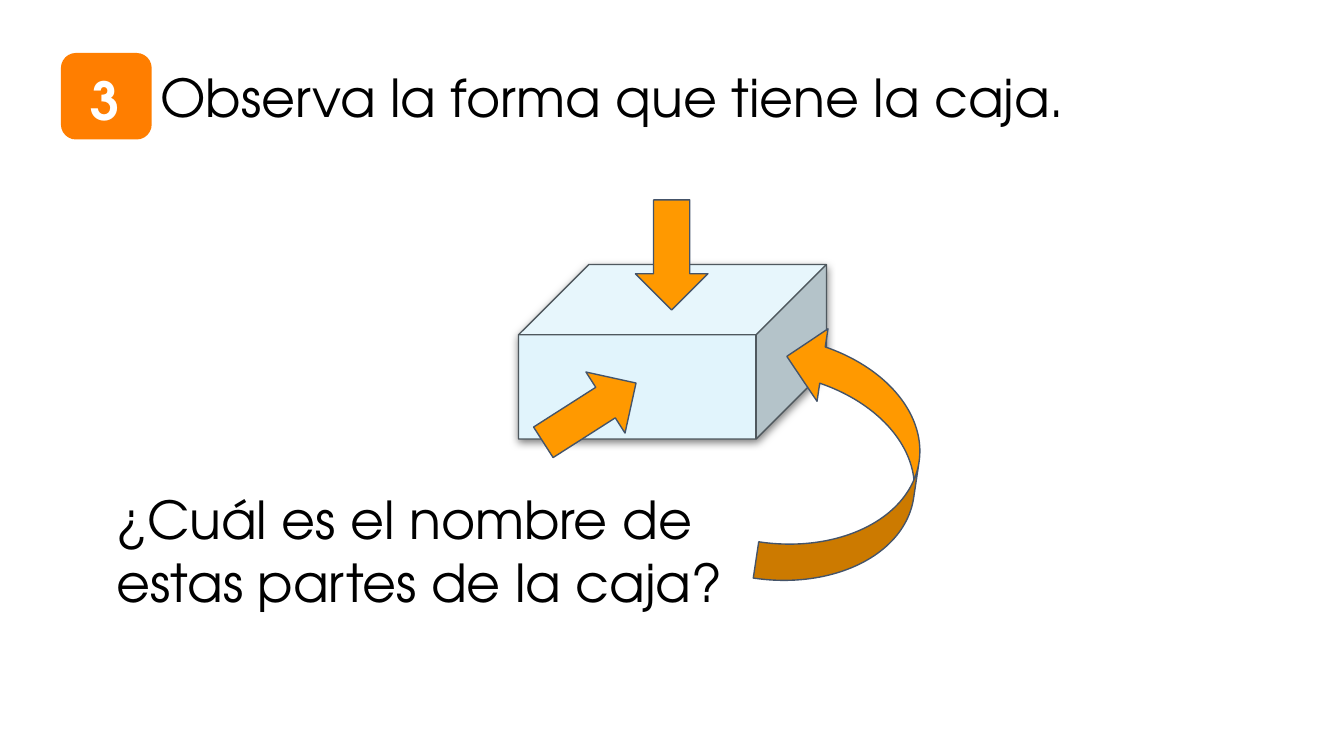
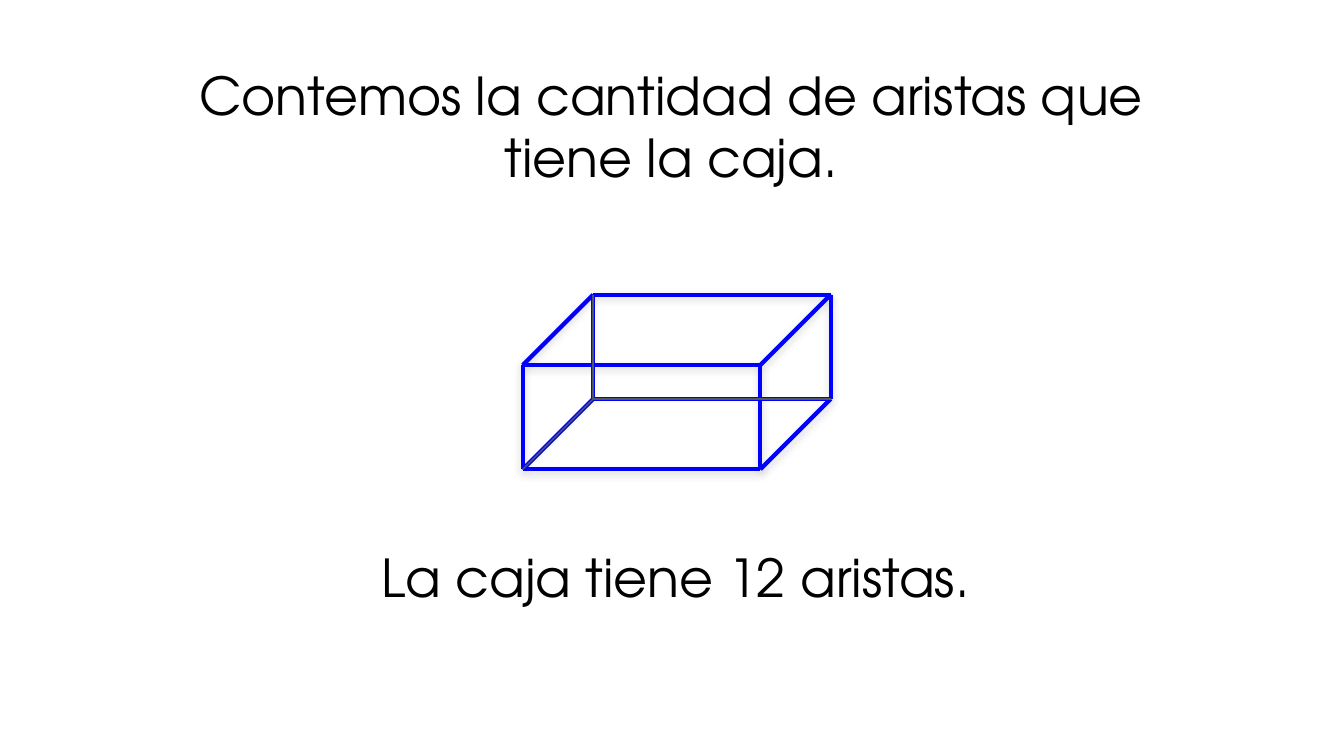
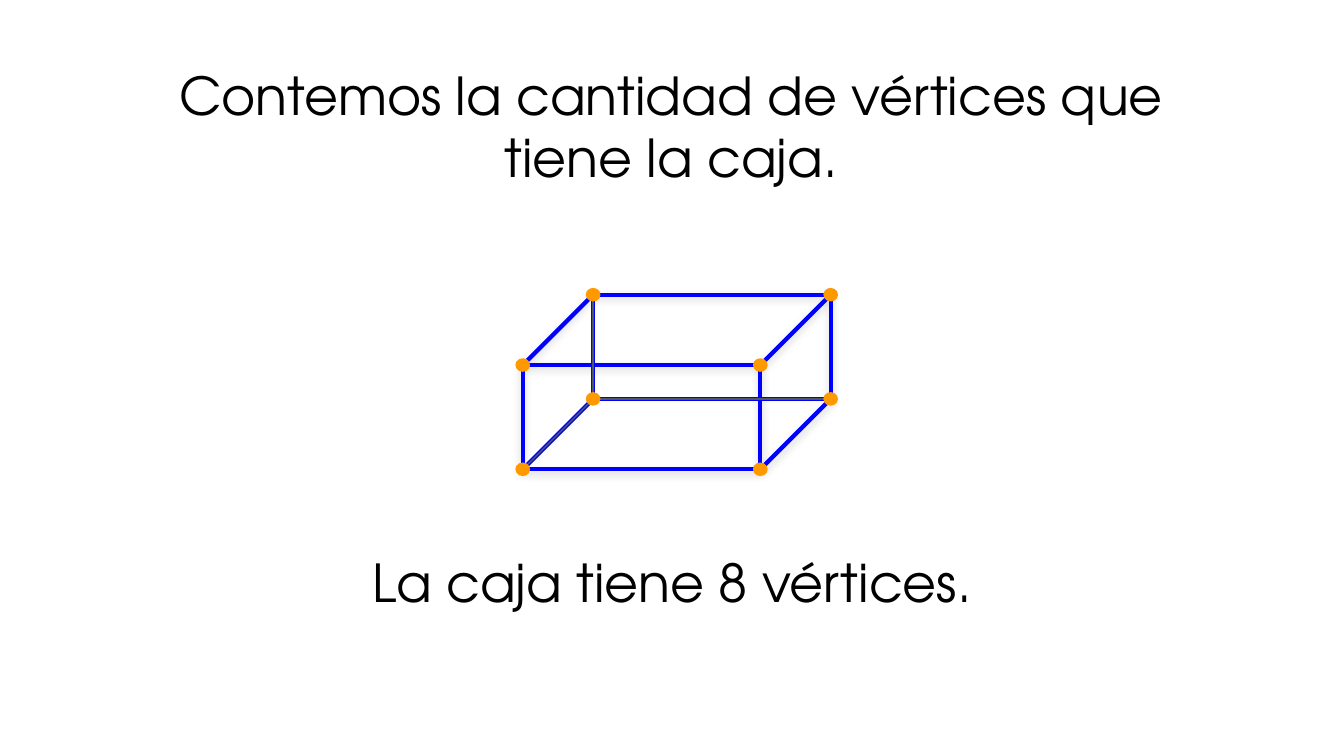
from lxml import etree
from pptx import Presentation
from pptx.dml.color import RGBColor
from pptx.enum.shapes import MSO_CONNECTOR, MSO_SHAPE
from pptx.enum.text import MSO_ANCHOR, MSO_AUTO_SIZE, PP_ALIGN
from pptx.oxml.ns import qn
from pptx.util import Cm, Pt

LEFT, CENTER = PP_ALIGN.LEFT, PP_ALIGN.CENTER
TOP, MIDDLE = MSO_ANCHOR.TOP, MSO_ANCHOR.MIDDLE
GROW = MSO_AUTO_SIZE.SHAPE_TO_FIT_TEXT
STRAIGHT = MSO_CONNECTOR.STRAIGHT
CUBE, OVAL, RECT = MSO_SHAPE.CUBE, MSO_SHAPE.OVAL, MSO_SHAPE.RECTANGLE
ROUND = MSO_SHAPE.ROUNDED_RECTANGLE
DOWN, CURVED = MSO_SHAPE.DOWN_ARROW, MSO_SHAPE.CURVED_UP_ARROW

FONT, SIZE = "TeX Gyre Adventor", 28
BLACK, WHITE = "000000", "FFFFFF"
BLUE, GREY, SLATE = "0000FF", "4F585D", "44546A"
ORANGE, BADGE, SKY = "FF9900", "FF7E00", "E1F4FC"

# Box geometry in cm: left, top, width, height
HEAD = (3.12, 1.09, 19.13, 2.59)
WIDE, HIGH, DEPTH = 5.82, 3.3, 1.33
DOT_W, DOT_H = 0.25, 0.23

# Corners run clockwise from top left, front face then back face
HIDDEN = [(4, 7), (7, 6), (7, 3)]
EDGES = [(base + i, base + (i + 1) % 4) for base in (0, 4) for i in range(4)]
EDGES += [(i, i + 4) for i in range(4)]


def color(code):
    return RGBColor.from_string(code)


def cms(box):
    return [Cm(value) for value in box]


# Text
def write(shape, text, align=LEFT, ink=BLACK, bold=False, anchor=TOP):
    frame = shape.text_frame
    frame.text = text
    frame.word_wrap = True
    frame.auto_size = GROW
    frame.vertical_anchor = anchor
    frame.margin_left = frame.margin_right = Cm(0.19)
    frame.margin_top = frame.margin_bottom = Cm(0.1)
    para = frame.paragraphs[0]
    para.alignment = align
    font = para.runs[0].font
    font.name, font.size, font.bold = FONT, Pt(SIZE), bold
    font.color.rgb = color(ink)


def title(slide, box, text, align):
    head = slide.shapes.title
    head.left, head.top, head.width, head.height = cms(box)
    write(head, text, align)


def note(slide, box, text, align):
    write(slide.shapes.add_textbox(*cms(box)), text, align)


# Shapes and lines
def shape(shapes, kind, box, fill, line, width=0.75, turn=0):
    item = shapes.add_shape(kind, *cms(box))
    item.shadow.inherit = False
    if fill:
        item.fill.solid()
        item.fill.fore_color.rgb = color(fill)
    else:
        item.fill.background()
    item.line.color.rgb = color(line)
    item.line.width = Pt(width)
    item.rotation = turn
    return item


def edge(shapes, start, end, ink, width):
    line = shapes.add_connector(STRAIGHT, *cms(start + end))
    line.line.color.rgb = color(ink)
    line.line.width = Pt(width)
    etree.SubElement(line._element.spPr, qn("a:effectLst"))


def cube(shapes, left, top, fill=None):
    item = shape(shapes, CUBE, (left, top, WIDE, HIGH), fill, "4F585E")
    item.adjustments[0] = DEPTH / HIGH
    effects = item._element.spPr.find(qn("a:effectLst"))
    shadow = etree.SubElement(effects, qn("a:outerShdw"), blurRad=str(Pt(4.5)),
                              dist=str(Pt(1.5)), dir="5400000", rotWithShape="0")
    tint = etree.SubElement(shadow, qn("a:srgbClr"), val=BLACK)
    etree.SubElement(tint, qn("a:alpha"), val="49000")


# Box drawn by its edges
def corners(left, top):
    right, low = left + WIDE - DEPTH, top + HIGH
    face = top + DEPTH
    front = [(left, face), (right, face), (right, low), (left, low)]
    return front + [(x + DEPTH, y - DEPTH) for x, y in front]


def frame(shapes, left, top):
    cube(shapes, left, top)
    points = corners(left, top)
    for pairs, ink, width in ((EDGES, BLUE, 2.25), (HIDDEN, GREY, 0.75)):
        for a, b in pairs:
            edge(shapes, points[a], points[b], ink, width)


def dots(shapes, left, top):
    for x, y in corners(left, top):
        box = (x - DOT_W / 2, y - DOT_H / 2, DOT_W, DOT_H)
        shape(shapes, OVAL, box, ORANGE, ORANGE, turn=2.5)


def badge(shapes, left, top, text):
    shape(shapes, ROUND, (left, top, 1.68, 1.6), BADGE, BADGE, 1)
    label = shape(shapes, RECT, (left + 0.25, top + 0.13, 1.14, 1.45),
                  BADGE, BADGE)
    write(label, text, CENTER, WHITE, True, MIDDLE)


def arrows(shapes, left, top):
    for kind, x, y, wide, high, turn in (
            (DOWN, 2.21, -1.22, 1.37, 2.08, 0),
            (CURVED, 3.71, 2.31, 4.93, 2.77, 278.6),
            (DOWN, 0.66, 1.76, 1.37, 2.08, 237.4)):
        shape(shapes, kind, (left + x, top + y, wide, high),
              ORANGE, SLATE, turn=turn)


# Slides
def observe(slide):
    title(slide, (2.84, 1.14, 19.13, 1.98),
          "Observa la forma que tiene la caja.", LEFT)
    left, top = 9.8, 5
    cube(slide.shapes, left, top, SKY)
    note(slide, (2.01, 9.12, 12.07, 2.59),
         "¿Cuál es el nombre de estas partes de la caja?", LEFT)
    arrows(slide.shapes, left, top)
    badge(slide.shapes, 1.17, 1.02, "3")


def count(slide, part, total, box, marked=False):
    title(slide, HEAD,
          f"Contemos la cantidad de {part} que tiene la caja.", CENTER)
    note(slide, box, f"La caja tiene {total} {part}.", CENTER)
    left, top = 9.88, 5.57
    if marked:
        frame(slide.shapes.add_group_shape().shapes, left, top)
        dots(slide.shapes, left, top)
    else:
        frame(slide.shapes, left, top)


def main():
    deck = Presentation()
    deck.slide_width, deck.slide_height = Cm(25.4), Cm(14.29)
    first, second, third = [deck.slides.add_slide(deck.slide_layouts[5])
                            for _ in range(3)]
    observe(first)
    count(second, "aristas", 12, (3.73, 10.21, 18.08, 1.4))
    count(third, "vértices", 8, (3.66, 10.31, 18.08, 1.4), marked=True)
    deck.save("out.pptx")


if __name__ == "__main__":
    main()
